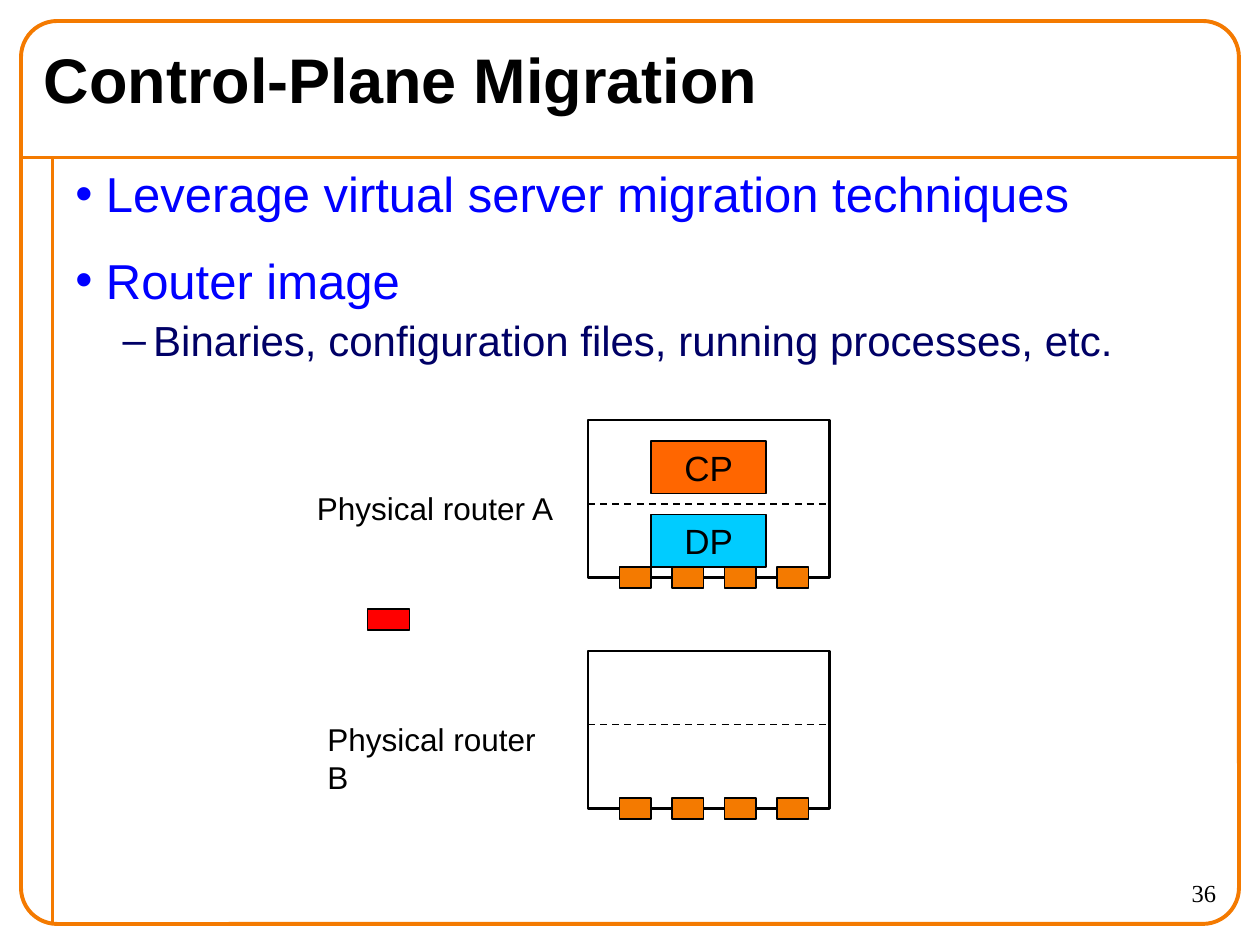
from lxml import etree
from pptx import Presentation
from pptx import util as u
from pptx.dml.color import RGBColor
from pptx.enum import dml, shapes, text
from pptx.oxml.ns import qn

ORANGE = RGBColor(0xF4, 0x7A, 0x00)
CP_ORANGE = RGBColor(0xFF, 0x66, 0x00)
DP_CYAN = RGBColor(0x00, 0xCC, 0xFF)
RED = RGBColor(0xFF, 0x00, 0x00)
BLUE = RGBColor(0x00, 0x00, 0xFF)
NAVY = RGBColor(0x00, 0x00, 0x66)
BLACK = RGBColor(0x00, 0x00, 0x00)

TITLE = {"size": u.Pt(36), "name": "Arial", "bold": True}
LABEL = {"size": u.Pt(18), "name": "Arial"}
PLANE = {"size": u.Pt(20), "name": "Arial"}
NUMBER = {"size": u.Pt(14), "name": "Times New Roman"}
TOPIC = {"size": u.Pt(28), "name": "Arial"}
DETAIL = {"size": u.Pt(24), "name": "Arial"}


def write(p, words, font, color=BLACK, align=text.PP_ALIGN.LEFT):
    p.alignment = align
    r = p.add_run()
    r.text = words
    for key, value in font.items():
        setattr(r.font, key, value)
    r.font.color.rgb = color


def add_text(s, box, words, font, wrap=True, anchor=text.MSO_ANCHOR.TOP,
             align=text.PP_ALIGN.LEFT):
    tf = s.shapes.add_textbox(*map(u.Pt, box)).text_frame
    for key, value in {"word_wrap": wrap, "vertical_anchor": anchor}.items():
        setattr(tf, key, value)
    write(tf.paragraphs[0], words, font, align=align)


def add_box(s, box, fill=None, line=BLACK, width=1,
            kind=shapes.MSO_SHAPE.RECTANGLE):
    sp = s.shapes.add_shape(kind, *map(u.Pt, box))
    sp.shadow.inherit = False
    if fill is None:
        sp.fill.background()
    else:
        sp.fill.solid()
        sp.fill.fore_color.rgb = fill
    sp.line.color.rgb = line
    sp.line.width = u.Pt(width)
    return sp


def add_line(s, ends, color, width, dash=None):
    c = s.shapes.add_connector(shapes.MSO_CONNECTOR.STRAIGHT, *map(u.Pt, ends))
    for key, value in {"width": u.Pt(width), "dash_style": dash}.items():
        setattr(c.line, key, value)
    c.line.color.rgb = color
    etree.SubElement(c._element.spPr, qn("a:effectLst"))


def add_frame(s, box):
    x, y, w, h = box
    rule_y, rail_x = y + 78, x + 18
    add_line(s, (x, rule_y, x + w, rule_y), ORANGE, 2.25)
    add_line(s, (rail_x, rule_y, rail_x, y + h), ORANGE, 2.25)
    sp = add_box(s, box, line=ORANGE, width=2.25,
                 kind=shapes.MSO_SHAPE.ROUNDED_RECTANGLE)
    sp.adjustments[0] = 0.04


def add_bullets(s, box, items):
    tf = s.shapes.add_textbox(*map(u.Pt, box)).text_frame
    tf.word_wrap = True
    for i, (words, mark, indent, before, font, color) in enumerate(items):
        p = tf.add_paragraph() if i else tf.paragraphs[0]
        pPr = p._p.get_or_add_pPr()
        pPr.set("marL", str(u.Pt(indent)))
        pPr.set("indent", str(u.Pt(-17.5)))
        etree.SubElement(pPr, qn("a:buFont"), typeface="Arial")
        etree.SubElement(pPr, qn("a:buChar"), char=mark)
        p.space_before = u.Pt(before)
        write(p, words, font, color)


def add_plane(s, box, words, fill):
    sp = add_box(s, box, fill)
    tf = sp.text_frame
    tf.vertical_anchor = text.MSO_ANCHOR.MIDDLE
    write(tf.paragraphs[0], words, PLANE, align=text.PP_ALIGN.CENTER)


def add_router(s, box, divider, label, label_x, planes=()):
    x, y, w, h = box
    add_box(s, box, width=1.5)
    add_text(s, (label_x, y + 36, 150, 29), label, LABEL, wrap=False)
    add_line(s, (x, y + divider, x + w, y + divider), BLACK, 1,
             dml.MSO_LINE.DASH)
    for i in range(4):
        add_box(s, (x + 18 + 30 * i, y + h - 6, 18, 12), ORANGE, width=0.75)
    for words, fill, offset in planes:
        add_plane(s, (x + 36, y + offset, 66, 30), words, fill)


def main():
    prs = Presentation()
    prs.slide_width, prs.slide_height = u.Pt(720), u.Pt(540)
    s = prs.slides.add_slide(prs.slide_layouts[6])
    add_frame(s, (12, 12, 696, 516))
    add_bullets(s, (36, 90, 648, 356), [
        ("Leverage virtual server migration techniques", "•", 17.5, 0,
         TOPIC, BLUE),
        ("Router image", "•", 17.5, 16, TOPIC, BLUE),
        ("Binaries, configuration files, running processes, etc.", "–", 44.5,
         3, DETAIL, NAVY),
    ])
    add_text(s, (18, 18, 672, 54), "Control-Plane Migration", TITLE,
             anchor=text.MSO_ANCHOR.MIDDLE)
    add_router(s, (336, 240, 138, 90), 48, "Physical router A", 174,
               [("DP", DP_CYAN, 54), ("CP", CP_ORANGE, 12)])
    add_router(s, (336, 372, 138, 90), 42, "Physical router B", 180)
    add_box(s, (210, 348, 24, 12), RED)
    add_text(s, (630, 498, 72, 30), "36", NUMBER, align=text.PP_ALIGN.RIGHT)
    prs.save("out.pptx")


if __name__ == "__main__":
    main()
